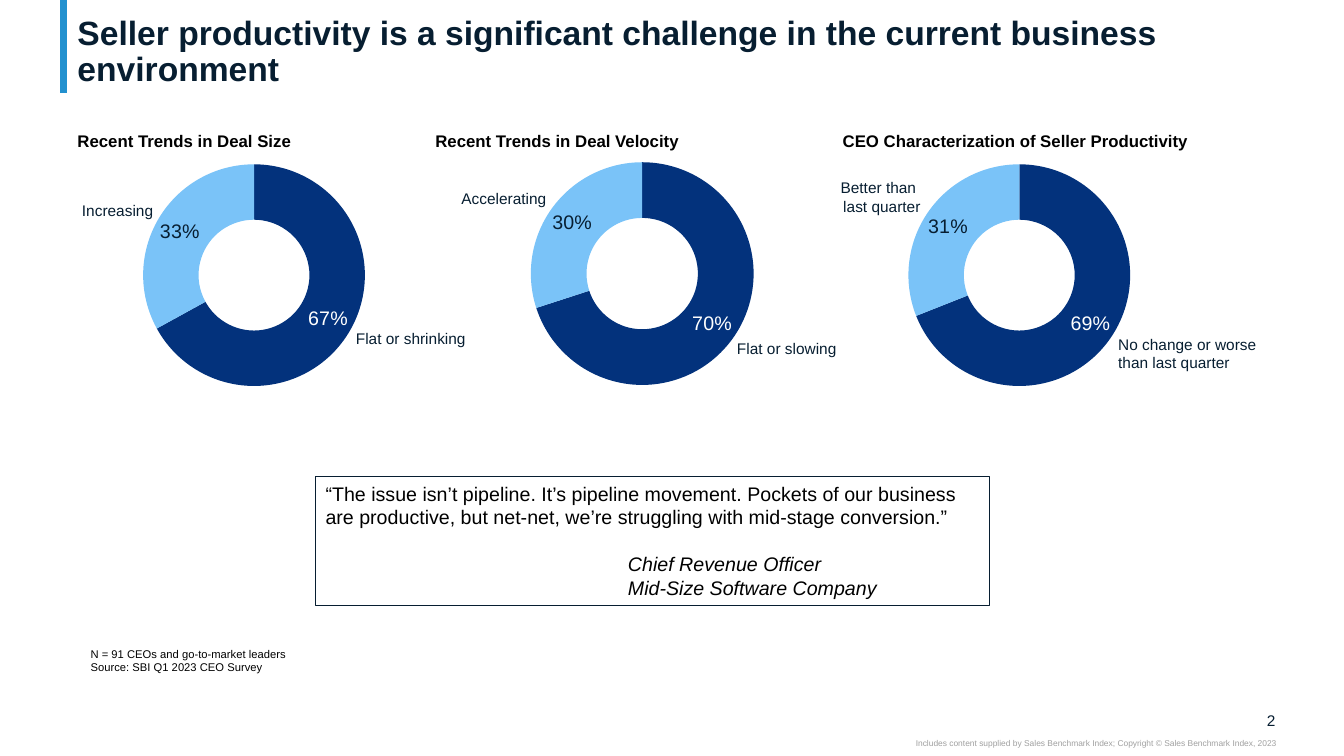
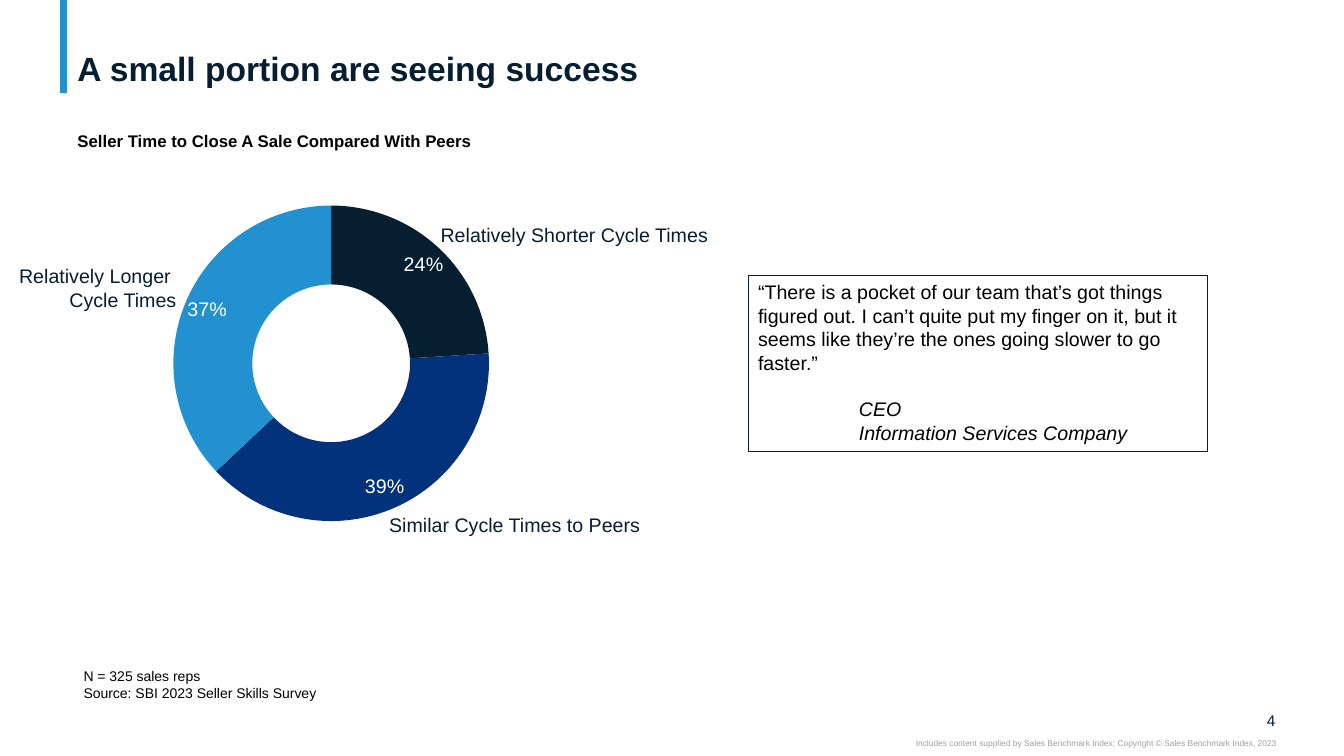
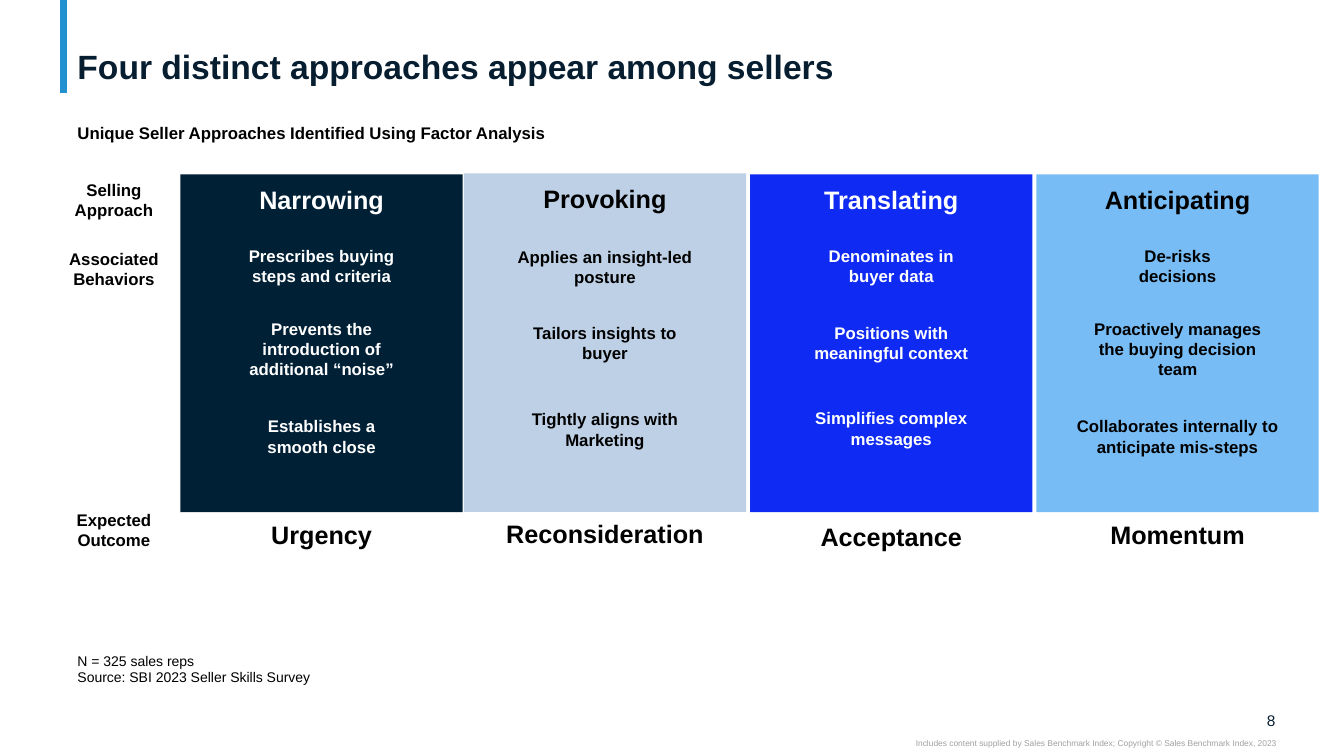
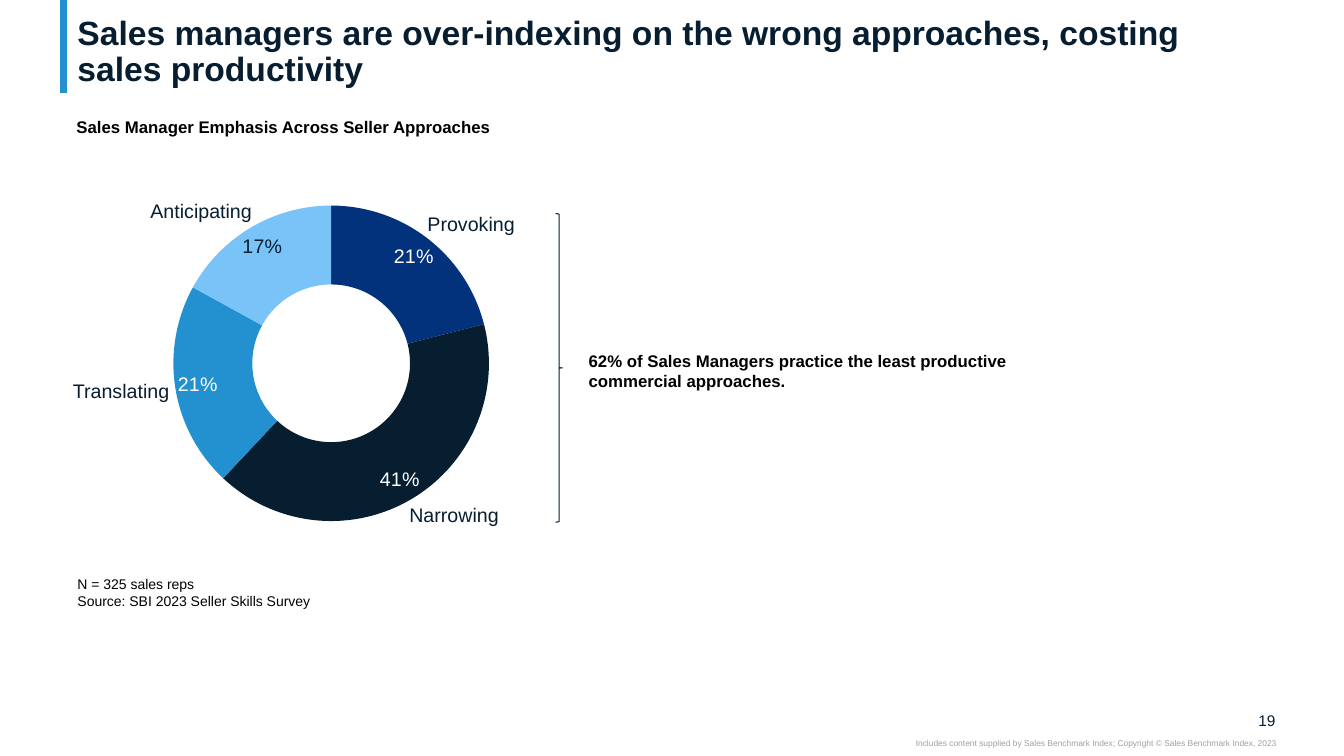
from dataclasses import dataclass
from math import cos, pi, sin
from typing import NamedTuple

from lxml import etree
from pptx import Presentation
from pptx.chart.data import CategoryChartData
from pptx.dml.color import RGBColor
from pptx.enum.chart import XL_CHART_TYPE
from pptx.enum.shapes import MSO_CONNECTOR, MSO_SHAPE
from pptx.enum.text import MSO_ANCHOR, PP_ALIGN
from pptx.oxml.ns import qn
from pptx.shapes.autoshape import Shape
from pptx.slide import Slide
from pptx.text.text import TextFrame
from pptx.util import Inches, Pt

FONT = "Arial"
BLACK = RGBColor(0x00, 0x00, 0x00)
WHITE = RGBColor(0xFF, 0xFF, 0xFF)
INK = RGBColor(0x07, 0x1E, 0x31)
NAVY = RGBColor(0x03, 0x32, 0x7C)
BLUE = RGBColor(0x23, 0x91, 0xCF)
SKY = RGBColor(0x7A, 0xC3, 0xF8)
GRAY = RGBColor(0xA0, 0xA0, 0xA0)
CARD_MIDNIGHT = RGBColor(0x00, 0x20, 0x36)
CARD_MIST = RGBColor(0xBE, 0xD0, 0xE5)
CARD_ROYAL = RGBColor(0x0F, 0x2A, 0xF2)
CARD_SKY = RGBColor(0x77, 0xBC, 0xF4)

LEFT, CENTER, RIGHT = PP_ALIGN.LEFT, PP_ALIGN.CENTER, PP_ALIGN.RIGHT
TOP, MIDDLE, BOTTOM = MSO_ANCHOR.TOP, MSO_ANCHOR.MIDDLE, MSO_ANCHOR.BOTTOM
RECTANGLE, RIGHT_BRACE = MSO_SHAPE.RECTANGLE, MSO_SHAPE.RIGHT_BRACE
STRAIGHT = MSO_CONNECTOR.STRAIGHT
DOUGHNUT = XL_CHART_TYPE.DOUGHNUT

COPYRIGHT = ("Includes content supplied by Sales Benchmark Index; "
             "Copyright © Sales Benchmark Index, 2023")
SELLER_SURVEY = "N = 325 sales reps\nSource: SBI 2023 Seller Skills Survey"
CARD_WIDTH = 2.8
CARD_BOTTOM = 5.08


class Box(NamedTuple):
    """Left, top, width and height in inches."""
    left: float
    top: float
    width: float
    height: float


class Insets(NamedTuple):
    left: float = 0.1
    top: float = 0.05
    right: float = 0.1
    bottom: float = 0.05


NO_INSETS = Insets(0, 0, 0, 0)


@dataclass(frozen=True)
class Style:
    size: float
    color: RGBColor = BLACK
    bold: bool = False
    align: PP_ALIGN = LEFT
    anchor: MSO_ANCHOR = TOP
    insets: Insets = Insets()
    line_spacing: float = 1.0


TITLE = Style(24, INK, True, anchor=BOTTOM, insets=Insets(0.1, 0, 0.1, 0), line_spacing=0.9)
PAGE_NUMBER = Style(11, INK, align=RIGHT, anchor=MIDDLE, insets=NO_INSETS)
COPYRIGHT_STYLE = Style(6, GRAY, align=RIGHT, insets=NO_INSETS)
HEADING = Style(12, bold=True)
ROW_HEADING = Style(12, bold=True, align=CENTER)
OUTCOME = Style(18, bold=True, align=CENTER)
SOURCE = Style(10)
SMALL_SOURCE = Style(8)
QUOTE = Style(14)


@dataclass(frozen=True)
class Segment:
    value: int
    color: RGBColor
    label: str
    label_box: Box
    label_align: PP_ALIGN = LEFT


@dataclass(frozen=True)
class Ring:
    frame: Box
    diameter: float
    label_size: float
    value_shift: float  # outward move of the values, as a share of the frame
    segments: tuple[Segment, ...]


class Behavior(NamedTuple):
    text: str
    top: float
    width: float
    height: float = 0.5


@dataclass(frozen=True)
class Approach:
    name: str
    left: float
    top: float
    fill: RGBColor
    color: RGBColor
    behaviors: tuple[Behavior, ...]
    outcome: str
    outcome_top: float


def inches(box: Box) -> list[Inches]:
    return [Inches(length) for length in box]


def write(frame: TextFrame, text: str, style: Style) -> None:
    frame.text = text
    frame.word_wrap = True
    frame.vertical_anchor = style.anchor
    (frame.margin_left, frame.margin_top,
     frame.margin_right, frame.margin_bottom) = map(Inches, style.insets)
    for paragraph in frame.paragraphs:
        paragraph.alignment = style.align
        paragraph.line_spacing = style.line_spacing
        for run in paragraph.runs:
            run.font.name = FONT
            run.font.size = Pt(style.size)
            run.font.bold = style.bold
            run.font.color.rgb = style.color


def add_text(slide: Slide, box: Box, text: str, style: Style) -> None:
    write(slide.shapes.add_textbox(*inches(box)).text_frame, text, style)


def add_outline(slide: Slide, kind: MSO_SHAPE, box: Box) -> Shape:
    shape = slide.shapes.add_shape(kind, *inches(box))
    shape.shadow.inherit = False
    shape.fill.background()
    shape.line.color.rgb = INK
    shape.line.width = Pt(0.75)
    return shape


def add_quote(slide: Slide, box: Box, quote: str, speaker: str, indent: float) -> None:
    """Framed quote; the speaker lines are italic and indented."""
    frame = add_outline(slide, RECTANGLE, box).text_frame
    write(frame, f"{quote}\n{speaker}", QUOTE)
    speaker_lines = frame.paragraphs[1:]
    speaker_lines[0].space_before = Pt(16.5)
    for paragraph in speaker_lines:
        paragraph._p.get_or_add_pPr().set("marL", str(Inches(indent)))
        for run in paragraph.runs:
            run.font.italic = True


def manual_layout(**settings: str | float) -> etree._Element:
    layout = etree.Element(qn("c:layout"))
    manual = etree.SubElement(layout, qn("c:manualLayout"))
    for name, value in settings.items():
        etree.SubElement(manual, qn(f"c:{name}")).set("val", str(value))
    return layout


def add_ring(slide: Slide, ring: Ring) -> None:
    """Doughnut chart with its values inside and segment names around it."""
    data = CategoryChartData(number_format='0"%"')
    data.categories = [str(number + 1) for number in range(len(ring.segments))]
    data.add_series("Series 1", [segment.value for segment in ring.segments])
    chart = slide.shapes.add_chart(DOUGHNUT, *inches(ring.frame), data).chart
    chart.has_legend = False
    chart.has_title = False
    chart.font.name = FONT
    chart.font.size = Pt(10)
    chart.font.color.rgb = INK
    plot = chart.plots[0]
    plot.vary_by_categories = False

    width = ring.diameter / ring.frame.width
    height = ring.diameter / ring.frame.height
    plot_area = chart._chartSpace.find(f".//{qn('c:plotArea')}")
    for old_layout in plot_area.findall(qn("c:layout")):
        plot_area.remove(old_layout)
    plot_area.insert(0, manual_layout(
        layoutTarget="inner", xMode="edge", yMode="edge",
        x=(1 - width) / 2, y=(1 - height) / 2, w=width, h=height))

    series = plot.series[0]
    total = sum(segment.value for segment in ring.segments)
    start = 0
    for index, segment in enumerate(ring.segments):
        point = series.points[index]
        point.format.fill.solid()
        point.format.fill.fore_color.rgb = segment.color
        point.format.line.fill.background()
        font = point.data_label.font
        font.name = FONT
        font.size = Pt(14)
        font.color.rgb = INK if segment.color == SKY else WHITE
        angle = 2 * pi * (start + segment.value / 2) / total
        start += segment.value
        label = series._element.findall(f".//{qn('c:dLbl')}")[index]
        label.insert(1, manual_layout(x=round(ring.value_shift * sin(angle), 4),
                                      y=round(-ring.value_shift * cos(angle), 4)))
        add_text(slide, segment.label_box, segment.label,
                 Style(ring.label_size, INK, align=segment.label_align, anchor=MIDDLE,
                       insets=NO_INSETS))


def add_approach(slide: Slide, approach: Approach) -> None:
    card = slide.shapes.add_shape(RECTANGLE, *inches(
        Box(approach.left, approach.top, CARD_WIDTH, CARD_BOTTOM - approach.top)))
    card.shadow.inherit = False
    card.fill.solid()
    card.fill.fore_color.rgb = approach.fill
    card.line.fill.background()
    write(card.text_frame, approach.name,
          Style(18, approach.color, True, CENTER, insets=Insets(0.3, 0.1, 0.3, 0.05)))
    center = approach.left + CARD_WIDTH / 2
    for behavior in approach.behaviors:
        add_text(slide, Box(center - behavior.width / 2, behavior.top,
                            behavior.width, behavior.height),
                 behavior.text, Style(12, approach.color, True, CENTER))
    add_text(slide, Box(approach.left, approach.outcome_top, CARD_WIDTH, 0.4),
             approach.outcome, OUTCOME)


def add_slide(presentation: Presentation, title: str, number: int,
              title_top: float = 0.04) -> Slide:
    """Slide with the shared band, title, page number and copyright line."""
    slide = presentation.slides.add_slide(presentation.slide_layouts[6])
    band = slide.shapes.add_connector(STRAIGHT, Inches(0.63), Inches(0),
                                      Inches(0.63), Inches(0.92))
    band.line.color.rgb = BLUE
    band.line.width = Pt(5)
    etree.SubElement(band._element.spPr, qn("a:effectLst"))
    add_text(slide, Box(12.32, 7.05, 0.33, 0.19), str(number), PAGE_NUMBER)
    add_text(slide, Box(7.5, 7.32, 5.16, 0.1), COPYRIGHT, COPYRIGHT_STYLE)
    add_text(slide, Box(0.67, title_top, 11.99, 0.84), title, TITLE)
    return slide


TRENDS = (
    ("Recent Trends in Deal Size", 0.67, Ring(
        Box(1.06, 1.54, 2.92, 2.38), 2.2, 11, 0.01, (
            Segment(67, NAVY, "Flat or shrinking", Box(3.53, 3.27, 1.3, 0.18)),
            Segment(33, SKY, "Increasing", Box(0.6, 2, 0.92, 0.18), RIGHT)))),
    ("Recent Trends in Deal Velocity", 4.22, Ring(
        Box(4.91, 1.52, 2.92, 2.39), 2.21, 11, 0.01, (
            Segment(70, NAVY, "Flat or slowing", Box(7.31, 3.37, 1.2, 0.18)),
            Segment(30, SKY, "Accelerating", Box(4.34, 1.88, 1.08, 0.18), RIGHT)))),
    ("CEO Characterization of Seller Productivity", 8.26, Ring(
        Box(8.65, 1.54, 2.92, 2.38), 2.2, 11, 0.01, (
            Segment(69, NAVY, "No change or worse \vthan last quarter",
                    Box(11.09, 3.32, 1.65, 0.37)),
            Segment(31, SKY, "Better than \vlast quarter",
                    Box(8.12, 1.77, 1.01, 0.37), RIGHT)))),
)

LARGE_FRAME = Box(1.63, 1.95, 3.31, 3.31)
CYCLE_TIMES = Ring(LARGE_FRAME, 3.13, 14, 0.05, (
    Segment(24, INK, "Relatively Shorter Cycle Times", Box(4.37, 2.21, 2.9, 0.23)),
    Segment(39, NAVY, "Similar Cycle Times to Peers", Box(3.86, 5.09, 2.7, 0.23)),
    Segment(37, BLUE, "Relatively Longer \vCycle Times",
            Box(0.05, 2.62, 1.7, 0.47), RIGHT),
))
EMPHASIS = Ring(LARGE_FRAME, 3.13, 14, 0.05, (
    Segment(21, NAVY, "Provoking", Box(4.24, 2.1, 1.1, 0.23)),
    Segment(41, INK, "Narrowing", Box(4.06, 4.99, 1.1, 0.23)),
    Segment(21, BLUE, "Translating", Box(0.52, 3.76, 1.16, 0.23), RIGHT),
    Segment(17, SKY, "Anticipating", Box(1.23, 1.98, 1.27, 0.23), RIGHT),
))

ROW_HEADINGS = (("Selling Approach", 1.73), ("Associated Behaviors", 2.42),
                ("Expected Outcome", 5.01))
APPROACHES = (
    Approach("Narrowing", 1.79, 1.73, CARD_MIDNIGHT, WHITE, (
        Behavior("Prescribes buying steps and criteria", 2.39, 1.7),
        Behavior("Prevents the introduction of additional “noise”", 3.11, 1.89, 0.71),
        Behavior("Establishes a smooth close", 4.08, 1.7)), "Urgency", 5.1),
    Approach("Provoking", 4.6, 1.72, CARD_MIST, BLACK, (
        Behavior("Applies an insight-led posture", 2.4, 1.96),
        Behavior("Tailors insights to buyer", 3.15, 1.96),
        Behavior("Tightly aligns with Marketing", 4.01, 1.96)), "Reconsideration", 5.09),
    Approach("Translating", 7.44, 1.73, CARD_ROYAL, WHITE, (
        Behavior("Denominates in buyer data", 2.39, 1.57),
        Behavior("Positions with meaningful context", 3.15, 1.98),
        Behavior("Simplifies complex messages", 4, 1.81)), "Acceptance", 5.12),
    Approach("Anticipating", 10.28, 1.73, CARD_SKY, BLACK, (
        Behavior("De-risks decisions", 2.39, 1.57),
        Behavior("Proactively manages the buying decision team", 3.11, 2.08, 0.71),
        Behavior("Collaborates internally to anticipate mis-steps", 4.08, 2.56)),
        "Momentum", 5.1),
)


def build_challenge(presentation: Presentation) -> None:
    slide = add_slide(presentation, "Seller productivity is a significant challenge "
                      "in the current business environment", 2)
    for heading, left, ring in TRENDS:
        add_text(slide, Box(left, 1.25, 3.97, 0.3), heading, HEADING)
        add_ring(slide, ring)
    add_quote(slide, Box(3.13, 4.73, 6.68, 1.28),
              "“The issue isn’t pipeline. It’s pipeline movement. Pockets of our business "
              "are productive, but net-net, we’re struggling with mid-stage conversion.”",
              "Chief Revenue Officer\nMid-Size Software Company", 3)
    add_text(slide, Box(0.8, 6.37, 4.09, 0.37),
             "N = 91 CEOs and go-to-market leaders\nSource: SBI Q1 2023 CEO Survey",
             SMALL_SOURCE)


def build_success(presentation: Presentation) -> None:
    slide = add_slide(presentation, "A small portion are seeing success", 4)
    add_text(slide, Box(0.67, 1.25, 5.4, 0.3),
             "Seller Time to Close A Sale Compared With Peers", HEADING)
    add_ring(slide, CYCLE_TIMES)
    add_quote(slide, Box(7.42, 2.73, 4.56, 1.75),
              "“There is a pocket of our team that’s got things figured out. I can’t quite "
              "put my finger on it, but it seems like they’re the ones going slower to go "
              "faster.”",
              "CEO\nInformation Services Company", 1)
    add_text(slide, Box(0.73, 6.57, 4.85, 0.44), SELLER_SURVEY, SOURCE)


def build_approaches(presentation: Presentation) -> None:
    slide = add_slide(presentation, "Four distinct approaches appear among sellers", 8, 0.02)
    add_text(slide, Box(0.67, 1.17, 7.6, 0.3),
             "Unique Seller Approaches Identified Using Factor Analysis", HEADING)
    for heading, top in ROW_HEADINGS:
        add_text(slide, Box(0.47, top, 1.32, 0.5), heading, ROW_HEADING)
    for approach in APPROACHES:
        add_approach(slide, approach)
    add_text(slide, Box(0.67, 6.42, 4.85, 0.44), SELLER_SURVEY, SOURCE)


def build_emphasis(presentation: Presentation) -> None:
    slide = add_slide(presentation, "Sales managers are over-indexing on the wrong "
                      "approaches, costing sales productivity", 19)
    add_text(slide, Box(0.66, 1.11, 6.37, 0.3),
             "Sales Manager Emphasis Across Seller Approaches", HEADING)
    add_ring(slide, EMPHASIS)
    add_outline(slide, RIGHT_BRACE, Box(5.51, 2.12, 0.07, 3.06))
    add_text(slide, Box(5.74, 3.43, 4.4, 0.5),
             "62% of Sales Managers practice the least productive commercial approaches.",
             HEADING)
    add_text(slide, Box(0.67, 5.66, 4.85, 0.44), SELLER_SURVEY, SOURCE)


def main() -> None:
    presentation = Presentation()
    presentation.slide_width = Inches(13.33)
    presentation.slide_height = Inches(7.5)
    build_challenge(presentation)
    build_success(presentation)
    build_approaches(presentation)
    build_emphasis(presentation)
    presentation.save("out.pptx")


if __name__ == "__main__":
    main()
